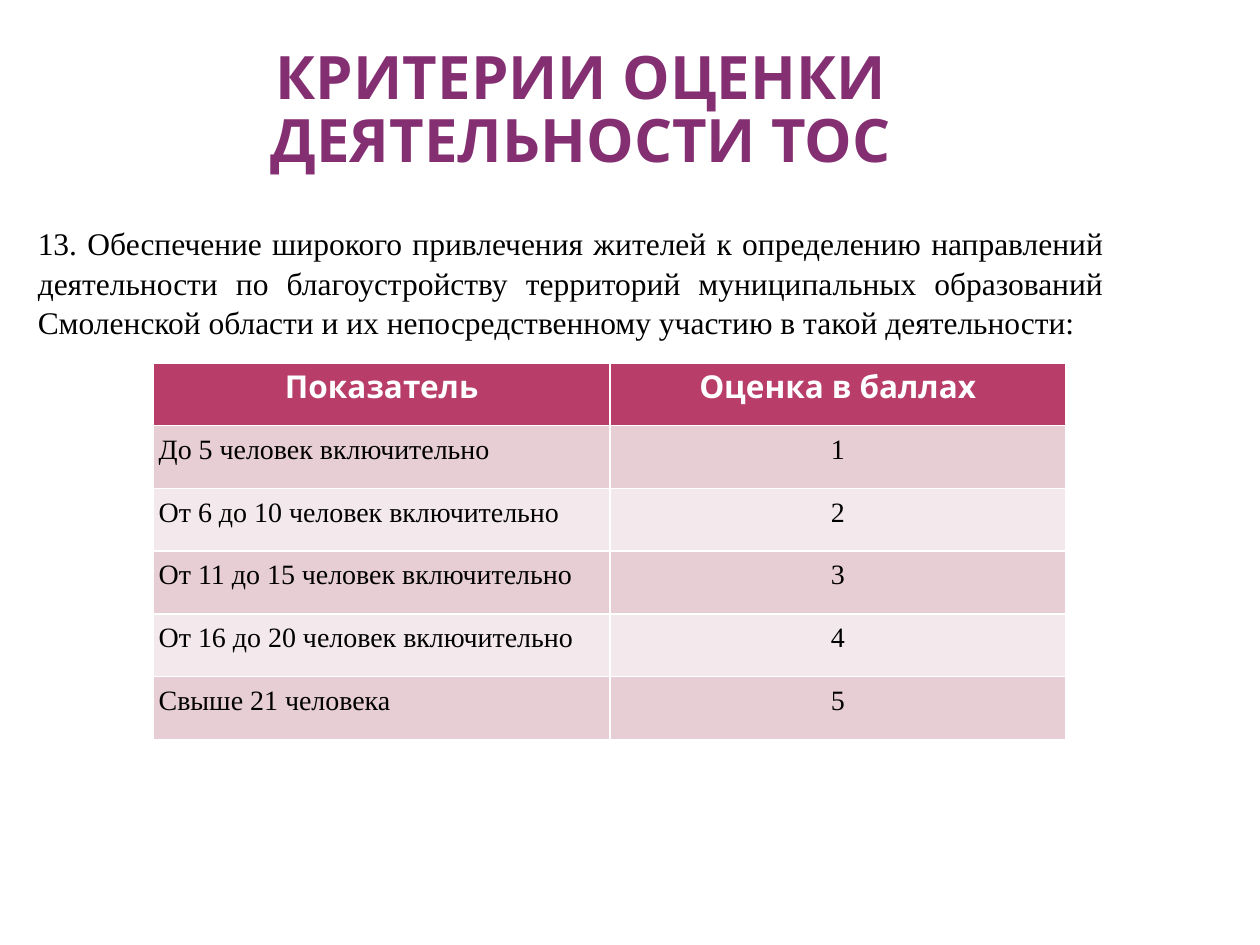
from pptx import Presentation
from pptx.dml.color import RGBColor
from pptx.enum.text import MSO_ANCHOR, MSO_AUTO_SIZE, PP_ALIGN
from pptx.util import Inches, Pt

TITLE = "КРИТЕРИИ ОЦЕНКИ ДЕЯТЕЛЬНОСТИ ТОС"
CRITERION = (
    "13. Обеспечение широкого привлечения жителей к определению направлений "
    "деятельности по благоустройству территорий муниципальных образований "
    "Смоленской области и их непосредственному участию в такой деятельности:"
)
SCORES = [
    ("Показатель", "Оценка в баллах"),
    ("До 5 человек включительно", "1"),
    ("От 6 до 10 человек включительно", "2"),
    ("От 11 до 15 человек включительно", "3"),
    ("От 16 до 20 человек включительно", "4"),
    ("Свыше 21 человека", "5"),
]
HEADER_FILL = "B83D68"
BAND_FILLS = ("F3E8EB", "E6CED4")


def color(value):
    return RGBColor.from_string(value)


def write(text_frame, text, font_name, size, text_color, alignment, bold=False):
    text_frame.text = text
    paragraph = text_frame.paragraphs[0]
    paragraph.alignment = alignment
    font = paragraph.runs[0].font
    font.name = font_name
    font.size = Pt(size)
    font.bold = bold
    font.color.rgb = color(text_color)
    return paragraph


def set_margins(target, horizontal, top, bottom):
    target.margin_left = target.margin_right = Inches(horizontal)
    target.margin_top = Inches(top)
    target.margin_bottom = Inches(bottom)


def add_title(slide):
    title = slide.shapes.title
    title.left, title.top = Inches(0.28), Inches(0.3)
    title.width, title.height = Inches(8.66), Inches(1.09)
    text_frame = title.text_frame
    text_frame.word_wrap = True
    text_frame.auto_size = MSO_AUTO_SIZE.NONE
    text_frame.vertical_anchor = MSO_ANCHOR.BOTTOM
    set_margins(text_frame, 0.05, 0, 0)
    paragraph = write(text_frame, TITLE, "Karla", 34.2, "852F73", PP_ALIGN.CENTER, True)
    paragraph.line_spacing = 0.88


def add_criterion(slide):
    box = slide.shapes.add_textbox(Inches(0.12), Inches(1.7), Inches(8.74), Inches(5.2))
    text_frame = box.text_frame
    text_frame.word_wrap = True
    set_margins(text_frame, 0.1, 0.07, 0.05)
    text_frame.margin_left = Inches(0.18)
    paragraph = write(text_frame, CRITERION, "Times New Roman", 18, "000000", PP_ALIGN.JUSTIFY)
    paragraph.line_spacing = 1.04


def add_scores(slide):
    table = slide.shapes.add_table(
        len(SCORES), len(SCORES[0]), Inches(1.22), Inches(2.88), Inches(7.24), Inches(2.99)
    ).table
    for row, values in enumerate(SCORES):
        for column, value in enumerate(values):
            cell = table.cell(row, column)
            cell.fill.solid()
            if row == 0:
                cell.fill.fore_color.rgb = color(HEADER_FILL)
                write(cell.text_frame, value, "Karla", 18, "FFFFFF", PP_ALIGN.CENTER, True)
            else:
                cell.fill.fore_color.rgb = color(BAND_FILLS[row % 2])
                set_margins(cell, 0.04, 0.07, 0.07)
                alignment = PP_ALIGN.CENTER if column else PP_ALIGN.JUSTIFY
                write(cell.text_frame, value, "Times New Roman", 16, "000000", alignment)


def main():
    presentation = Presentation()
    presentation.slide_width, presentation.slide_height = Inches(10), Inches(7.5)
    slide = presentation.slides.add_slide(presentation.slide_layouts[5])
    add_title(slide)
    add_criterion(slide)
    add_scores(slide)
    presentation.save("out.pptx")


if __name__ == "__main__":
    main()
